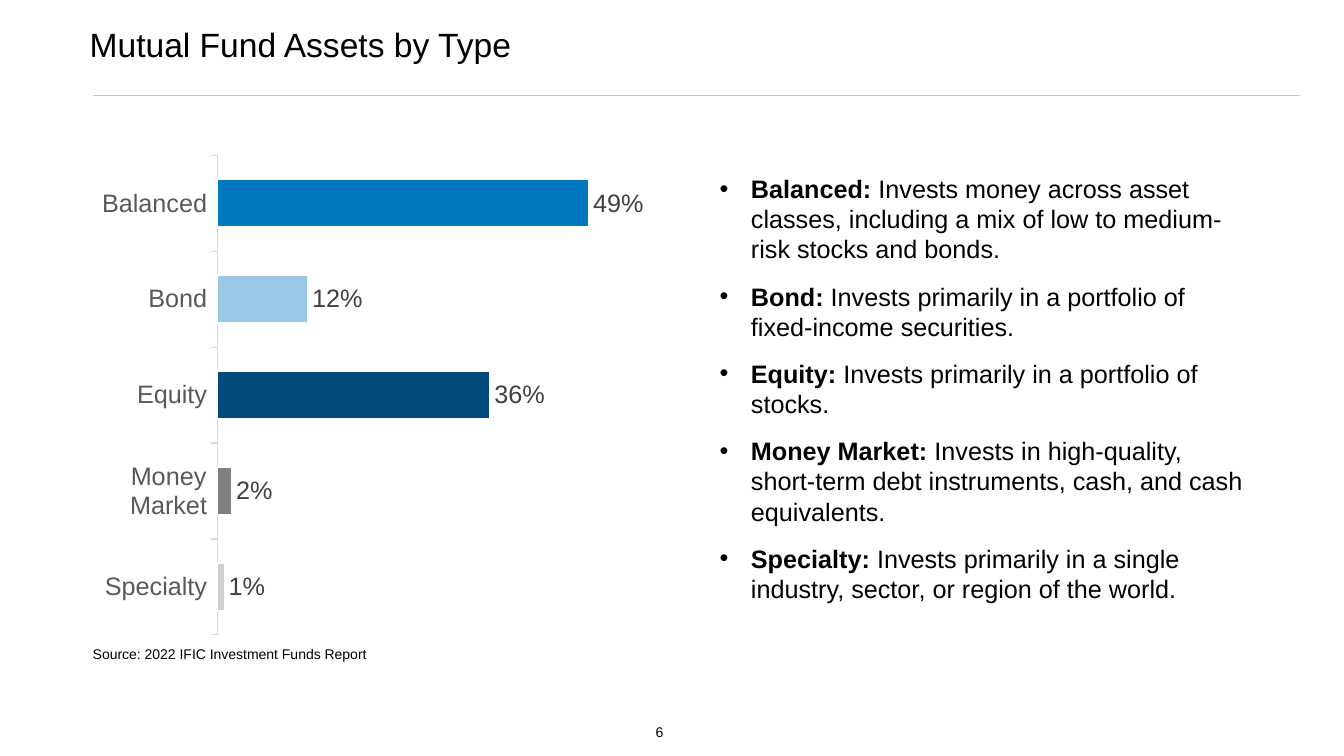
"""Build the slide on mutual fund assets by type: a bar chart beside definitions."""
from dataclasses import dataclass

from lxml.etree import SubElement
from pptx import Presentation
from pptx.chart.data import CategoryChartData
from pptx.dml.color import RGBColor
from pptx.enum.chart import XL_CHART_TYPE as ChartType, XL_LABEL_POSITION as LabelPosition
from pptx.enum.chart import XL_TICK_MARK as TickMark
from pptx.enum.shapes import MSO_CONNECTOR as Connector
from pptx.enum.text import PP_ALIGN as Align
from pptx.oxml.ns import qn
from pptx.util import Inches, Pt

TITLE = "Mutual Fund Assets by Type"
SOURCE = "Source: 2022 IFIC Investment Funds Report"
PAGE_NUMBER = "6"
FUNDS = [
    ("Balanced", 0.49, "0079C1",
     "Invests money across asset classes, including a mix of low to medium-risk stocks and bonds."),
    ("Bond", 0.12, "99C9E6", "Invests primarily in a portfolio of fixed-income securities."),
    ("Equity", 0.36, "004A7C", "Invests primarily in a portfolio of stocks."),
    ("Money Market", 0.02, "808080",
     "Invests in high-quality, short-term debt instruments, cash, and cash equivalents."),
    ("Specialty", 0.01, "D0CECE",
     "Invests primarily in a single industry, sector, or region of the world."),
]


@dataclass(frozen=True)
class Theme:
    font: str = "Arial"
    ink: str = "000000"
    rule: str = "C8C8C8"
    axis: str = "D9D9D9"
    category: str = "595959"
    value: str = "404040"
    edge: str = "FFFFFF"
    title: int = 24
    body: int = 18
    small: int = 10


THEME = Theme()
WIDTH, HEIGHT = 13.33, 7.5
LEFT, RULE_RIGHT, RULE_TOP = 0.92, 12.89, 0.95
CHART_TOP, CHART_WIDTH, CHART_HEIGHT = 1.44, 5.87, 4.96
PLOT_SHARE = {"x": 0.21, "y": 0.02, "w": 0.77, "h": 0.96}
HANG = 0.31


def style(font, size, color=THEME.ink, bold=False):
    font.name, font.size, font.bold = THEME.font, Pt(size), bold
    font.color.rgb = RGBColor.from_string(color)


def stroke(line, color, width):
    line.color.rgb = RGBColor.from_string(color)
    line.width = Pt(width)


def add_span(para, text, size, bold=False):
    span = para.add_run()
    span.text = text
    style(span.font, size, bold=bold)


def add_box(page, left, top, width, height):
    frame = page.shapes.add_textbox(*map(Inches, (left, top, width, height))).text_frame
    frame.word_wrap = True
    return frame


def add_rule(page):
    rule = page.shapes.add_connector(
        Connector.STRAIGHT, *map(Inches, (LEFT, RULE_TOP, RULE_RIGHT, RULE_TOP)))
    stroke(rule.line, THEME.rule, 0.75)
    SubElement(rule._element.spPr, qn("a:effectLst"))


def place_plot(chart):
    plot_area = chart._chartSpace.chart.plotArea
    layout = plot_area.find(qn("c:layout"))
    if layout is None:
        layout = SubElement(plot_area, qn("c:layout"))
        plot_area.insert(0, layout)
    manual = SubElement(layout, qn("c:manualLayout"))
    settings = {"layoutTarget": "inner", "xMode": "edge", "yMode": "edge", **PLOT_SHARE}
    for name, setting in settings.items():
        SubElement(manual, qn(f"c:{name}")).set("val", str(setting))


def add_fund_chart(page):
    data = CategoryChartData(number_format="0%")
    data.categories = [name for name, *_ in FUNDS]
    data.add_series("Series 1", [share for _, share, *_ in FUNDS])
    chart = page.shapes.add_chart(
        ChartType.BAR_CLUSTERED,
        *map(Inches, (LEFT, CHART_TOP, CHART_WIDTH, CHART_HEIGHT)), data).chart
    chart.has_legend = chart.has_title = False
    style(chart.font, THEME.body)
    place_plot(chart)

    names, scale = chart.category_axis, chart.value_axis
    names.reverse_order = True
    names.major_tick_mark = TickMark.OUTSIDE
    names.has_major_gridlines = scale.has_major_gridlines = False
    stroke(names.format.line, THEME.axis, 0.75)
    style(names.tick_labels.font, THEME.body, THEME.category)
    scale.minimum_scale, scale.maximum_scale = 0, 0.6
    scale.visible = False

    plot = chart.plots[0]
    plot.gap_width, plot.vary_by_categories = 100, False
    plot.has_data_labels = True
    labels = plot.data_labels
    labels.show_value, labels.position = True, LabelPosition.OUTSIDE_END
    labels.number_format, labels.number_format_is_linked = "0%", False
    style(labels.font, THEME.body, THEME.value)
    for index, (_, _, color, _) in enumerate(FUNDS):
        bar = plot.series[0].points[index].format
        bar.fill.solid()
        bar.fill.fore_color.rgb = RGBColor.from_string(color)
        stroke(bar.line, THEME.edge, 1.5)


def add_definitions(page):
    frame = add_box(page, 7.04, 1.67, 5.44, 4.41)
    for index, (name, _, _, meaning) in enumerate(FUNDS):
        para = frame.add_paragraph() if index else frame.paragraphs[0]
        para.space_after = Pt(12)
        properties = para._p.get_or_add_pPr()
        properties.set("marL", str(Inches(HANG)))
        properties.set("indent", str(-Inches(HANG)))
        SubElement(properties, qn("a:buFont")).set("typeface", THEME.font)
        SubElement(properties, qn("a:buChar")).set("char", "•")
        add_span(para, f"{name}: ", THEME.body, bold=True)
        add_span(para, meaning, THEME.body)


def main():
    deck = Presentation()
    deck.slide_width, deck.slide_height = Inches(WIDTH), Inches(HEIGHT)
    page = deck.slides.add_slide(deck.slide_layouts[6])

    add_rule(page)
    heading = add_box(page, 0.79, 0.23, 11.5, 0.6).paragraphs[0]
    heading.line_spacing = 0.9
    add_span(heading, TITLE, THEME.title)

    add_fund_chart(page)
    add_definitions(page)

    source = add_box(page, LEFT, CHART_TOP + CHART_HEIGHT, 2.83, 0.24)
    source.margin_left = source.margin_right = source.margin_top = source.margin_bottom = 0
    add_span(source.paragraphs[0], SOURCE, THEME.small)

    number = add_box(page, 6.29, 7.13, 0.5, 0.3).paragraphs[0]
    number.alignment = Align.CENTER
    add_span(number, PAGE_NUMBER, THEME.small)
    deck.save("out.pptx")


if __name__ == "__main__":
    main()
